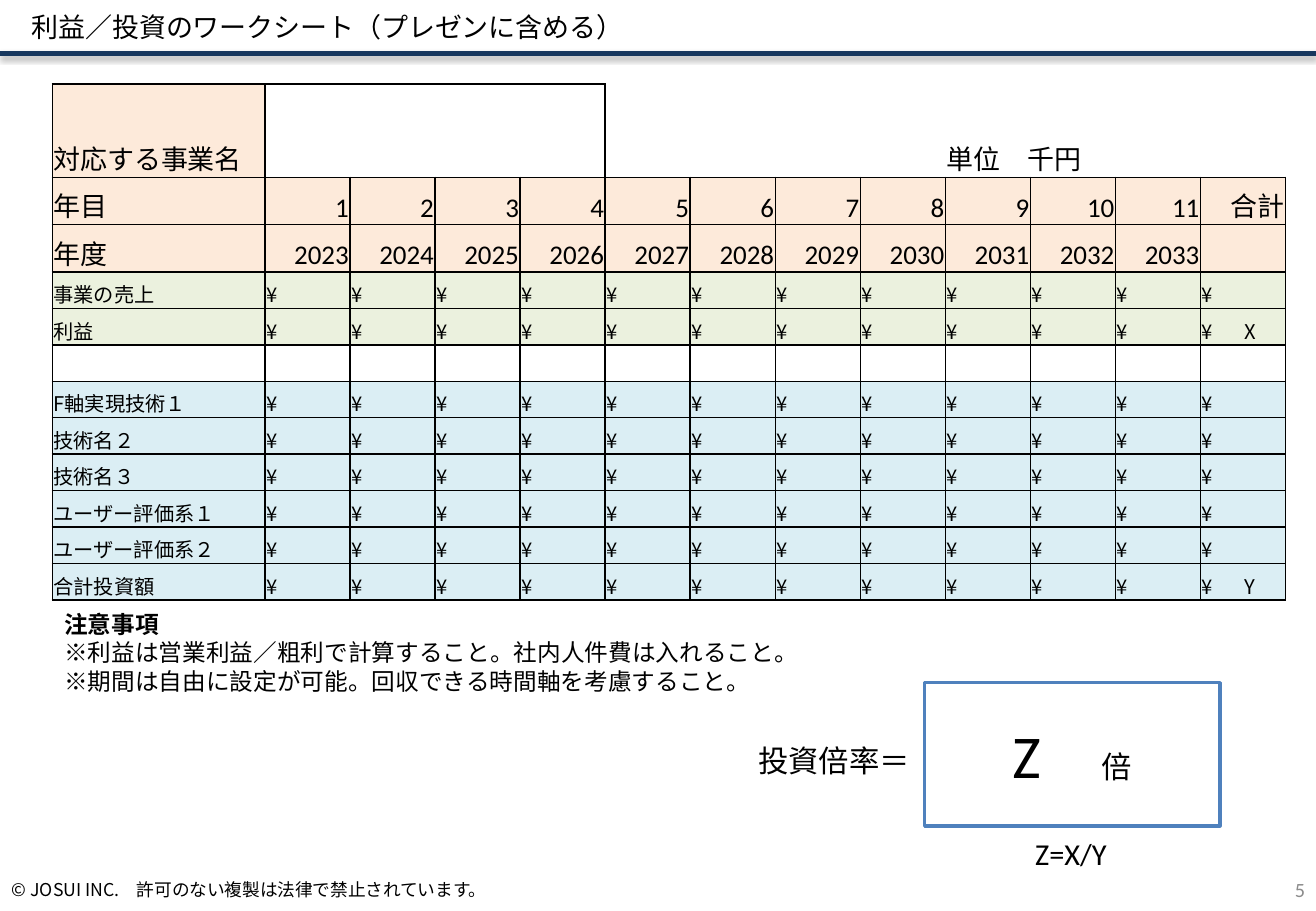
from lxml.etree import SubElement
from pptx import Presentation
from pptx.dml.color import RGBColor
from pptx.enum.shapes import MSO_CONNECTOR, MSO_SHAPE
from pptx.enum.text import MSO_ANCHOR, PP_ALIGN
from pptx.oxml.ns import qn
from pptx.util import Inches, Pt

BLACK = RGBColor(0x00, 0x00, 0x00)
WHITE = RGBColor(0xFF, 0xFF, 0xFF)
GRAY = RGBColor(0x8C, 0x8C, 0x8C)
NAVY = RGBColor(0x17, 0x37, 0x5E)
BLUE = RGBColor(0x4F, 0x81, 0xBD)
PEACH = RGBColor(0xFD, 0xEA, 0xDA)
GREEN = RGBColor(0xEB, 0xF1, 0xDE)
AQUA = RGBColor(0xDB, 0xEE, 0xF4)
CALIBRI, NOTO = "Calibri", "Noto Sans CJK JP"

TITLE = "利益／投資のワークシート（プレゼンに含める）"
COPYRIGHT = "© JOSUI INC.　許可のない複製は法律で禁止されています。"
PAGE_NUMBER = "5"
NOTES = [
    "注意事項",
    "※利益は営業利益／粗利で計算すること。社内人件費は入れること。",
    "※期間は自由に設定が可能。回収できる時間軸を考慮すること。",
]
RATIO_LABEL, RATIO_FORMULA = "投資倍率＝", "Z=X/Y"
RATIO_VALUE = [("Z　", 36), ("倍", 18)]

YEARS = 11
FIRST_YEAR = 2023
BUSINESS_LABEL, UNIT, TOTAL = "対応する事業名", "単位　千円", "合計"
BUSINESS_SPAN, UNIT_SPAN = (1, 4), (9, 10)
# label, fill, symbol of the total
MONEY_ROWS = [
    ("事業の売上", GREEN, ""),
    ("利益", GREEN, "X"),
    ("", None, ""),
    ("F軸実現技術１", AQUA, ""),
    ("技術名２", AQUA, ""),
    ("技術名３", AQUA, ""),
    ("ユーザー評価系１", AQUA, ""),
    ("ユーザー評価系２", AQUA, ""),
    ("合計投資額", AQUA, "Y"),
]
LABEL_WIDTH, YEAR_WIDTH = 1.75, 0.7
ROW_HEIGHTS = [0.77, 0.39, 0.39] + [0.3] * len(MONEY_ROWS)


def add_run(paragraph, text, size, font=CALIBRI, color=BLACK, bold=False):
    run = paragraph.add_run()
    run.text = text
    for key, value in {"name": font, "size": Pt(size), "bold": bold}.items():
        setattr(run.font, key, value)
    run.font.color.rgb = color
    SubElement(run._r.get_or_add_rPr(), qn("a:ea"), typeface=NOTO)


def add_text(box, lines, size, font=CALIBRI, color=BLACK, align=PP_ALIGN.LEFT,
             anchor=MSO_ANCHOR.TOP, wrap=True, bold_first=False):
    frame = box.text_frame
    frame.word_wrap = wrap
    frame.vertical_anchor = anchor
    for index, line in enumerate(lines):
        paragraph = frame.add_paragraph() if index else frame.paragraphs[0]
        paragraph.alignment = align
        add_run(paragraph, line, size, font, color, bold_first and index == 0)


def add_box(slide, place, lines, size, **formats):
    box = slide.shapes.add_textbox(*map(Inches, place))
    add_text(box, lines, size, **formats)


def add_header_rule(slide):
    rule = slide.shapes.add_connector(
        MSO_CONNECTOR.STRAIGHT, 0, Inches(0.44), Inches(10.83), Inches(0.44))
    rule.line.color.rgb = NAVY
    rule.line.width = Pt(3)
    effects = SubElement(rule._element.spPr, qn("a:effectLst"))
    shadow = SubElement(effects, qn("a:outerShdw"), blurRad=str(Pt(3.1)),
                        dist=str(Pt(1.8)), dir="5400000", rotWithShape="0")
    shade = SubElement(shadow, qn("a:srgbClr"), val=str(BLACK))
    SubElement(shade, qn("a:alpha"), val="35000")


def set_borders(cell, sides):
    """Draw the sides named by the letters L, R, T and B and clear the others."""
    properties = cell._tc.get_or_add_tcPr()
    for side in "LRTB":
        border = SubElement(properties, qn(f"a:ln{side}"), w=str(Pt(1)))
        if side in sides:
            fill = SubElement(border, qn("a:solidFill"))
            SubElement(fill, qn("a:srgbClr"), val=str(BLACK))
        else:
            SubElement(border, qn("a:noFill"))


def fill_cell(cell, text, size, font=CALIBRI, fill=None, align=PP_ALIGN.LEFT,
              sides="LRTB"):
    margins = {"margin_left": 0.01, "margin_right": 0.01, "margin_top": 0.01,
               "margin_bottom": 0}
    for key, value in margins.items():
        setattr(cell, key, Inches(value))
    cell.vertical_anchor = MSO_ANCHOR.BOTTOM
    set_borders(cell, sides)
    if fill is None:
        cell.fill.background()
    else:
        cell.fill.solid()
        cell.fill.fore_color.rgb = fill
    paragraph = cell.text_frame.paragraphs[0]
    paragraph.alignment = align
    if "\t" in text:
        tabs = SubElement(paragraph._p.get_or_add_pPr(), qn("a:tabLst"))
        SubElement(tabs, qn("a:tab"), pos=str(Inches(0.35)), algn="l")
    if text:
        add_run(paragraph, text, size, font)
    else:
        paragraph._p.get_or_add_endParaRPr().set("sz", str(size * 100))


def add_worksheet(slide):
    widths = [LABEL_WIDTH] + [YEAR_WIDTH] * (YEARS + 1)
    table = slide.shapes.add_table(
        len(ROW_HEIGHTS), len(widths), Inches(0.43), Inches(0.69),
        Inches(sum(widths)), Inches(sum(ROW_HEIGHTS))).table
    table.first_row = table.horz_banding = False
    for column, width in zip(table.columns, widths):
        column.width = Inches(width)
    for row, height in zip(table.rows, ROW_HEIGHTS):
        row.height = Inches(height)
    for first, last in (BUSINESS_SPAN, UNIT_SPAN):
        table.cell(0, first).merge(table.cell(0, last))

    fill_cell(table.cell(0, 0), BUSINESS_LABEL, 16, fill=PEACH)
    for column in range(1, len(widths)):
        after_business = column - BUSINESS_SPAN[1]
        sides = "LRTB" if after_business <= 0 else "LB" if after_business == 1 else "B"
        fill_cell(table.cell(0, column), UNIT if column == UNIT_SPAN[0] else "",
                  16, NOTO, sides=sides)

    year_rows = [("年目", 1, TOTAL), ("年度", FIRST_YEAR, "")]
    for row, (label, start, total) in enumerate(year_rows, 1):
        fill_cell(table.cell(row, 0), label, 16, fill=PEACH)
        for column in range(1, YEARS + 1):
            fill_cell(table.cell(row, column), str(start + column - 1), 16,
                      fill=PEACH, align=PP_ALIGN.RIGHT)
        fill_cell(table.cell(row, YEARS + 1), total, 16, NOTO, PEACH, PP_ALIGN.RIGHT)

    for row, (label, fill, symbol) in enumerate(MONEY_ROWS, 3):
        yen = "¥" if label else ""
        total = f"{yen}\t{symbol}" if symbol else yen
        for column, text in enumerate([label] + [yen] * YEARS + [total]):
            fill_cell(table.cell(row, column), text, 12, NOTO, fill)


def add_ratio_box(slide):
    box = slide.shapes.add_shape(
        MSO_SHAPE.RECTANGLE, *map(Inches, (7.61, 5.62, 2.43, 1.18)))
    box.shadow.inherit = False
    box.fill.solid()
    box.fill.fore_color.rgb = WHITE
    box.line.color.rgb = BLUE
    box.line.width = Pt(2)
    box.text_frame.vertical_anchor = MSO_ANCHOR.MIDDLE
    paragraph = box.text_frame.paragraphs[0]
    paragraph.alignment = PP_ALIGN.CENTER
    for text, size in RATIO_VALUE:
        add_run(paragraph, text, size)


def main():
    deck = Presentation()
    deck.slide_width, deck.slide_height = Inches(10.83), Inches(7.5)
    slide = deck.slides.add_slide(deck.slide_layouts[5])
    title = slide.shapes.title
    place = {"left": 0.16, "top": 0, "width": 9.59, "height": 0.44}
    for key, value in place.items():
        setattr(title, key, Inches(value))
    add_text(title, [TITLE], 16, font=NOTO, anchor=MSO_ANCHOR.MIDDLE)
    add_header_rule(slide)
    add_box(slide, (0, 7.15, 10.49, 0.35), [COPYRIGHT], 10.5, font=NOTO,
            anchor=MSO_ANCHOR.MIDDLE)
    add_box(slide, (8.31, 7.15, 2.53, 0.35), [PAGE_NUMBER], 12, color=GRAY,
            align=PP_ALIGN.RIGHT, anchor=MSO_ANCHOR.MIDDLE)
    add_worksheet(slide)
    add_box(slide, (0.43, 4.97, 10.15, 0.81), NOTES, 14, bold_first=True)
    add_box(slide, (6.14, 6.06, 1.46, 0.4), [RATIO_LABEL], 18, wrap=False)
    add_ratio_box(slide)
    add_box(slide, (8.42, 6.83, 0.8, 0.4), [RATIO_FORMULA], 18, wrap=False)
    deck.save("out.pptx")


if __name__ == "__main__":
    main()
